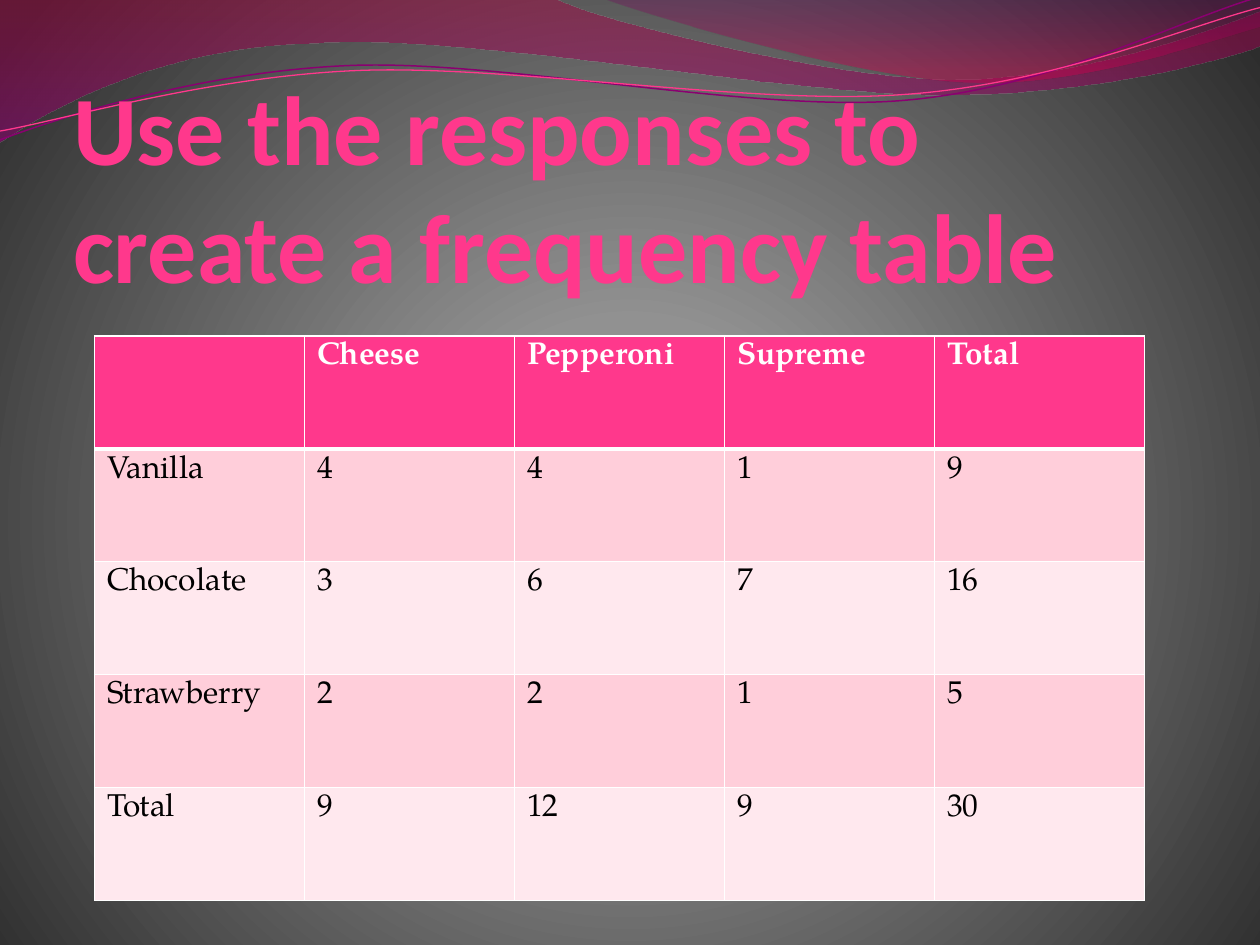
import dataclasses
import math
import typing

import pptx
import pptx.dml.color
import pptx.enum.text
import pptx.oxml
import pptx.oxml.ns
import pptx.util

# The slide is a grid of 1000 columns by 750 rows.
COLS, ROWS = 1000, 750
UNIT = pptx.util.Inches(10) // COLS
TILT = -2.7
PINK, WHITE, BLACK = "FF388C", "FFFFFF", "000000"
BANDS = ["FFCEDA", "FFE8EE"]
DOWN = '<a:lin ang="5400000" scaled="0"/>'
GLOW = ('<a:path path="circle">'
        '<a:fillToRect l="10000" t="110000" r="10000" b="100000"/></a:path>')

Point = typing.Tuple[float, float]


class Stop(typing.NamedTuple):
    place: int
    tint: str
    alpha: int = 100


@dataclasses.dataclass
class Wave:
    """Pieces hold one point for a straight piece, three for a curve."""
    start: Point
    pieces: typing.List[typing.List[Point]]
    stops: typing.Sequence[Stop] = ()
    tint: str = ""
    width: float = 0
    hub: typing.Optional[Point] = None


BACK = [Stop(0, "969696"), Stop(25, "919191"), Stop(100, "2D2D2D")]

WAVES = [
    Wave((0, 0), [
        [(440, -1)],
        [(476, 17), (664, 63), (758, 63)],
        [(853, 63), (958, 26), (1000, 9)],
        [(1001, 36)],
        [(983, 44), (870, 76), (746, 75)],
        [(622, 75), (382, 28), (257, 34)],
        [(129, 36), (46, 83), (-1, 113)],
    ], stops=[Stop(0, "A90042", 45), Stop(100, "8E0073", 55)]),
    Wave((479, -1), [
        [(509, 11), (682, 62), (769, 65)],
        [(856, 69), (961, 32), (1000, 21)],
        [(1000, 0)],
    ], stops=[Stop(0, "73005E", 30), Stop(80, "C9004F", 45)]),
    Wave((0, 111), [
        [(48, 93), (158, 57), (277, 52)],
        [(395, 47), (593, 89), (713, 80)],
        [(833, 71), (938, 15), (998, -2)],
    ], tint="8A0070", width=0.85, hub=(499, 57.5)),
    Wave((0, 104), [
        [(47, 96), (164, 61), (283, 56)],
        [(403, 51), (597, 84), (717, 75)],
        [(836, 67), (941, 21), (1000, 6)],
    ], tint=PINK, width=0.75, hub=(499.5, 59)),
]

TABLE = [
    ["", "Cheese", "Pepperoni", "Supreme", "Total"],
    ["Vanilla", "4", "4", "1", "9"],
    ["Chocolate", "3", "6", "7", "16"],
    ["Strawberry", "2", "2", "1", "5"],
    ["Total", "9", "12", "9", "30"],
]


def hue(code: str) -> pptx.dml.color.RGBColor:
    return pptx.dml.color.RGBColor.from_string(code)


def box(*cells: float) -> typing.List[int]:
    """Turn grid counts into lengths."""
    return [round(cell * UNIT) for cell in cells]


def style(font, code: str, form: dict) -> None:
    font.color.rgb = hue(code)
    for key, value in form.items():
        setattr(font, key, value)


def blend(parent, stops: typing.Sequence[Stop], aim: str) -> None:
    """Replace the parent's solid fill with a gradient."""
    marks = "".join(
        f'<a:gs pos="{stop.place * 1000}"><a:srgbClr val="{stop.tint}">'
        f'<a:alpha val="{stop.alpha * 1000}"/></a:srgbClr></a:gs>'
        for stop in stops)
    grad = pptx.oxml.parse_xml(
        f'<a:gradFill {pptx.oxml.ns.nsdecls("a")} rotWithShape="1">'
        f'<a:gsLst>{marks}</a:gsLst>{aim}</a:gradFill>')
    parent.replace(parent.find(pptx.oxml.ns.qn("a:solidFill")), grad)


def level(dot: Point, hub: typing.Optional[Point]) -> Point:
    """Take the tilt out of a point, about the hub."""
    if hub is None:
        return dot
    turn = math.radians(-TILT)
    x, y = dot[0] - hub[0], dot[1] - hub[1]
    return (hub[0] + x * math.cos(turn) - y * math.sin(turn),
            hub[1] + x * math.sin(turn) + y * math.cos(turn))


def bend(shape, pieces: typing.List[typing.List[Point]]) -> None:
    """Join each run of three straight pieces into one curve."""
    lines = iter(shape.element.xpath(".//a:path/a:lnTo"))
    for piece in pieces:
        group = [next(lines) for _ in piece]
        if len(group) == 3:
            curve = pptx.oxml.parse_xml(
                f'<a:cubicBezTo {pptx.oxml.ns.nsdecls("a")}/>')
            group[0].addprevious(curve)
            for line in group:
                curve.append(line[0])
                line.getparent().remove(line)


def draw_wave(slide, wave: Wave) -> None:
    pen = slide.shapes.build_freeform(*box(*level(wave.start, wave.hub)))
    pen.add_line_segments([box(*level(dot, wave.hub))
                           for piece in wave.pieces for dot in piece],
                          close=bool(wave.stops))
    shape = pen.convert_to_shape()
    bend(shape, wave.pieces)
    shape.shadow.inherit = False
    if wave.stops:
        shape.fill.solid()
        blend(shape.element.spPr, wave.stops, DOWN)
        shape.line.fill.background()
    else:
        shape.rotation = TILT
        shape.fill.background()
        shape.line.color.rgb = hue(wave.tint)
        shape.line.width = pptx.util.Pt(wave.width)


def draw_title(slide, text: str) -> None:
    frame = slide.shapes.add_textbox(*box(58, 91.5, 850, 149)).text_frame
    form = {"word_wrap": True,
            "vertical_anchor": pptx.enum.text.MSO_ANCHOR.BOTTOM,
            "margin_left": 0, "margin_top": 0,
            "margin_right": 0, "margin_bottom": 0}
    for key, value in form.items():
        setattr(frame, key, value)
    run = frame.paragraphs[0].add_run()
    run.text = text
    style(run.font, PINK,
          {"name": "Calibri", "size": pptx.util.Pt(56), "bold": True})


def edge(cell, widths: typing.Dict[str, int]) -> None:
    """Add white borders, in points, ahead of the cell's fill."""
    props = cell._tc.get_or_add_tcPr()
    for spot, (side, width) in enumerate(widths.items()):
        props.insert(spot, pptx.oxml.parse_xml(
            f'<a:ln{side} {pptx.oxml.ns.nsdecls("a")} w="{pptx.util.Pt(width)}">'
            f'<a:solidFill><a:srgbClr val="{WHITE}"/></a:solidFill></a:ln{side}>'))


def draw_table(slide, rows: typing.List[typing.List[str]]) -> None:
    grid = slide.shapes.add_table(
        len(rows), len(rows[0]), *box(75, 266.67, 833.33, 448)).table
    for r, row in enumerate(rows):
        head = r == 0
        for c, text in enumerate(row):
            cell = grid.cell(r, c)
            cell.fill.solid()
            cell.fill.fore_color.rgb = hue(PINK if head else BANDS[(r - 1) % 2])
            edge(cell, {"L": 1, "R": 1, "T": 3 if r == 1 else 1,
                        "B": 3 if head else 1})
            if text:
                run = cell.text_frame.paragraphs[0].add_run()
                run.text = text
                style(run.font, WHITE if head else BLACK,
                      {"name": "TeX Gyre Pagella", "size": pptx.util.Pt(18),
                       "bold": head})


def main() -> None:
    deck = pptx.Presentation()
    deck.slide_width, deck.slide_height = box(COLS, ROWS)
    slide = deck.slides.add_slide(deck.slide_layouts[6])
    slide.background.fill.solid()
    blend(slide.element.xpath(".//p:bgPr")[0], BACK, GLOW)
    for wave in WAVES:
        draw_wave(slide, wave)
    draw_title(slide, "Use the responses to create a frequency table")
    draw_table(slide, TABLE)
    deck.save("out.pptx")


if __name__ == "__main__":
    main()
